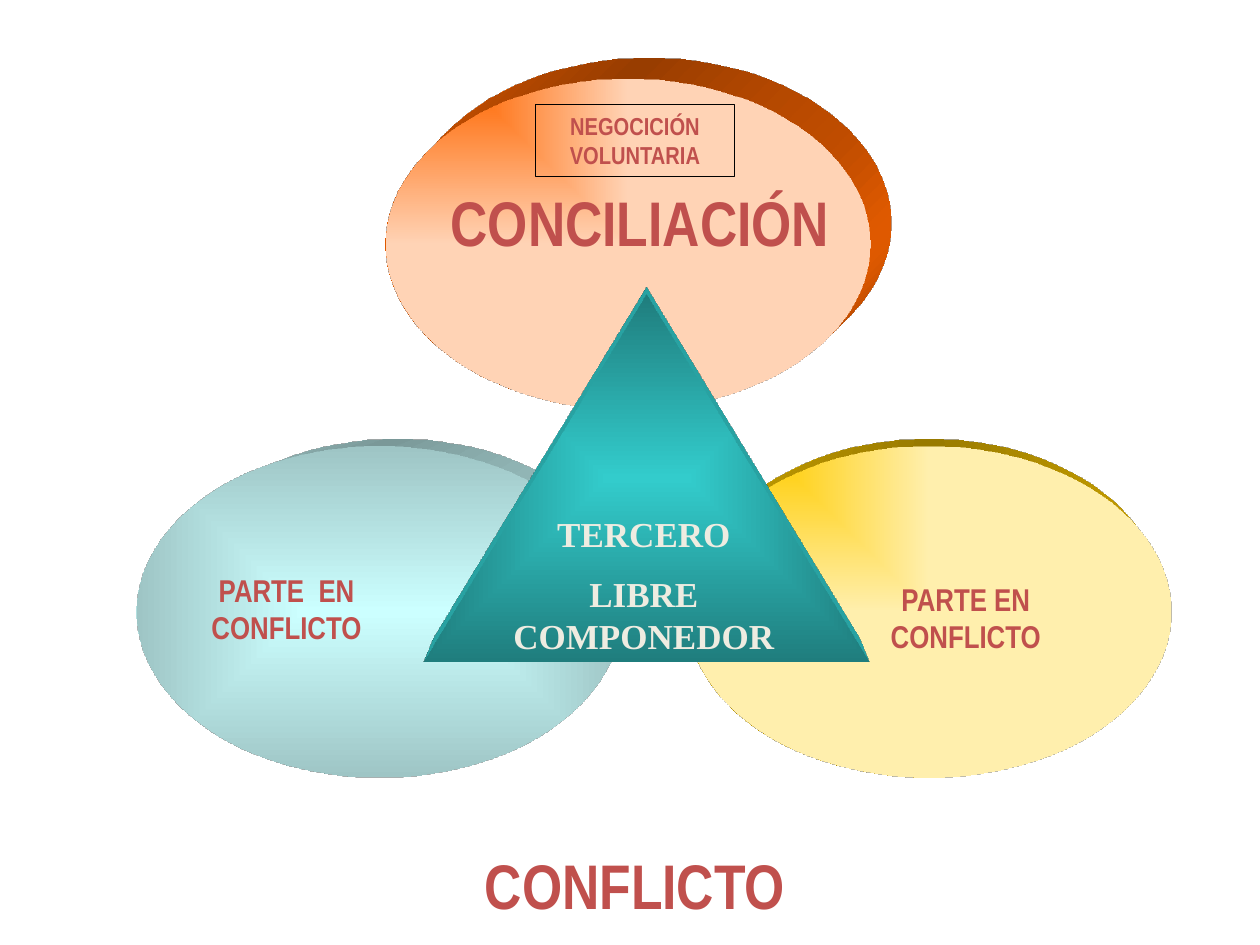
from lxml import etree
from pptx import Presentation
from pptx.dml.color import RGBColor
from pptx.enum.shapes import MSO_SHAPE
from pptx.enum.text import MSO_AUTO_SIZE, PP_ALIGN
from pptx.oxml import parse_xml
from pptx.util import Inches, Pt

NS = "http://schemas.openxmlformats.org/drawingml/2006/main"
BLACK = RGBColor(0x00, 0x00, 0x00)
RED = RGBColor(0xC0, 0x50, 0x4D)
CREAM = RGBColor(0xEE, 0xEC, 0xE1)
ORANGE = RGBColor(0xFF, 0x66, 0x00)
PEACH = RGBColor(0xFF, 0xD3, 0xB5)
GOLD = RGBColor(0xFF, 0xCC, 0x00)
PALE_GOLD = RGBColor(0xFF, 0xEF, 0xAD)
ICE = RGBColor(0xCC, 0xFF, 0xFF)
GREY_TEAL = RGBColor(0x9E, 0xC5, 0xC5)
TURQUOISE = RGBColor(0x33, 0xCC, 0xCC)
DARK_TEAL = RGBColor(0x1F, 0x7D, 0x7D)
CORNER = ("rect", 0, 0, 100, 100)
CENTRE = ("shape", 50, 50, 50, 50)
OVAL_W, OVAL_H = 3.85, 2.63


def add_solid(shapes, kind, box, start, end, path, camera):
    """Add an extruded shape with a path gradient."""
    sp = shapes.add_shape(kind, *map(Inches, box))
    sp.shadow.inherit = False
    sp.line.fill.background()
    name, left, top, right, bottom = path
    fill = parse_xml(
        f'<a:gradFill xmlns:a="{NS}" rotWithShape="0"><a:gsLst>'
        f'<a:gs pos="0"><a:srgbClr val="{start}"/></a:gs>'
        f'<a:gs pos="100000"><a:srgbClr val="{end}"/></a:gs></a:gsLst>'
        f'<a:path path="{name}"><a:fillToRect l="{left}000" t="{top}000" '
        f'r="{right}000" b="{bottom}000"/></a:path></a:gradFill>')
    props = sp.fill._xPr
    props.find(f"{{{NS}}}prstGeom").addnext(fill)
    scene = etree.SubElement(props, f"{{{NS}}}scene3d")
    etree.SubElement(scene, f"{{{NS}}}camera", prst=camera)
    etree.SubElement(scene, f"{{{NS}}}lightRig", rig="legacyFlat3", dir="b")
    depth = etree.SubElement(props, f"{{{NS}}}sp3d", extrusionH="430200",
                             prstMaterial="legacyMatte")
    for bevel in ("bevelT", "bevelB"):
        etree.SubElement(depth, f"{{{NS}}}{bevel}", w="13500", h="13500", prst="angle")
    colour = etree.SubElement(depth, f"{{{NS}}}extrusionClr")
    etree.SubElement(colour, f"{{{NS}}}srgbClr", val=str(start))


def add_text(shapes, box, lines, size, font="Arial Narrow", color=RED):
    """Add a centred bold text box, one paragraph for each line."""
    sp = shapes.add_textbox(*map(Inches, box))
    tf = sp.text_frame
    tf.word_wrap = True
    tf.auto_size = MSO_AUTO_SIZE.SHAPE_TO_FIT_TEXT
    for i, line in enumerate(lines):
        p = tf.add_paragraph() if i else tf.paragraphs[0]
        p.alignment = PP_ALIGN.CENTER
        p.space_before = Pt(size / 2)
        r = p.add_run()
        r.text = line
        r.font.name = font
        r.font.size = Pt(size)
        r.font.bold = True
        r.font.color.rgb = color
    return sp


def add_conciliation(shapes, x, y):
    """Place the top oval with its title and framed label."""
    add_solid(shapes, MSO_SHAPE.OVAL, (x, y, OVAL_W, OVAL_H), ORANGE, PEACH,
              CORNER, "legacyObliqueTopRight")
    add_text(shapes, (x + 0.38, y + 0.79, 3.28, 0.71), ["CONCILIACIÓN"], 36)
    label = add_text(shapes, (x + 1.19, y + 0.21, 1.58, 0.57),
                     ["NEGOCICIÓN VOLUNTARIA"], 14)
    label.line.color.rgb = BLACK
    label.line.width = Pt(0.75)


def add_party(shapes, x, y, start, end, path, camera, text, text_box):
    """Place one party to the conflict as a grouped oval and label."""
    group = shapes.add_group_shape().shapes
    add_solid(group, MSO_SHAPE.OVAL, (x, y, OVAL_W, OVAL_H), start, end, path, camera)
    dx, dy, w, h = text_box
    add_text(group, (x + dx, y + dy, w, h), [text], 18)


def add_third_party(shapes, x, y, w, h):
    """Place the central triangle and its text as a group."""
    group = shapes.add_group_shape().shapes
    add_solid(group, MSO_SHAPE.ISOSCELES_TRIANGLE, (x, y, w, h), TURQUOISE,
              DARK_TEAL, CENTRE, "legacyPerspectiveTop")
    add_text(group, (x + 0.56, y + 1.68, 2.38, 1.28), ["TERCERO", "LIBRE COMPONEDOR"],
             20, "Times New Roman", CREAM)


def main():
    """Build and save the slide."""
    prs = Presentation()
    prs.slide_width, prs.slide_height = Inches(10), Inches(7.5)
    shapes = prs.slides.add_slide(prs.slide_layouts[6]).shapes
    add_conciliation(shapes, 3.06, 0.62)
    add_party(shapes, 5.45, 3.54, GOLD, PALE_GOLD, CORNER, "legacyPerspectiveTop",
              "PARTE EN CONFLICTO", (1.37, 1.01, 1.69, 0.71))
    add_party(shapes, 1.08, 3.54, ICE, GREY_TEAL, CENTRE, "legacyPerspectiveTopRight",
              "PARTE  EN CONFLICTO", (0.08, 0.94, 2.23, 0.71))
    add_third_party(shapes, 3.36, 2.34, 3.54, 2.91)
    add_text(shapes, (1.75, 6.67, 6.58, 0.7), ["CONFLICTO"], 36)
    prs.save("out.pptx")


if __name__ == "__main__":
    main()
